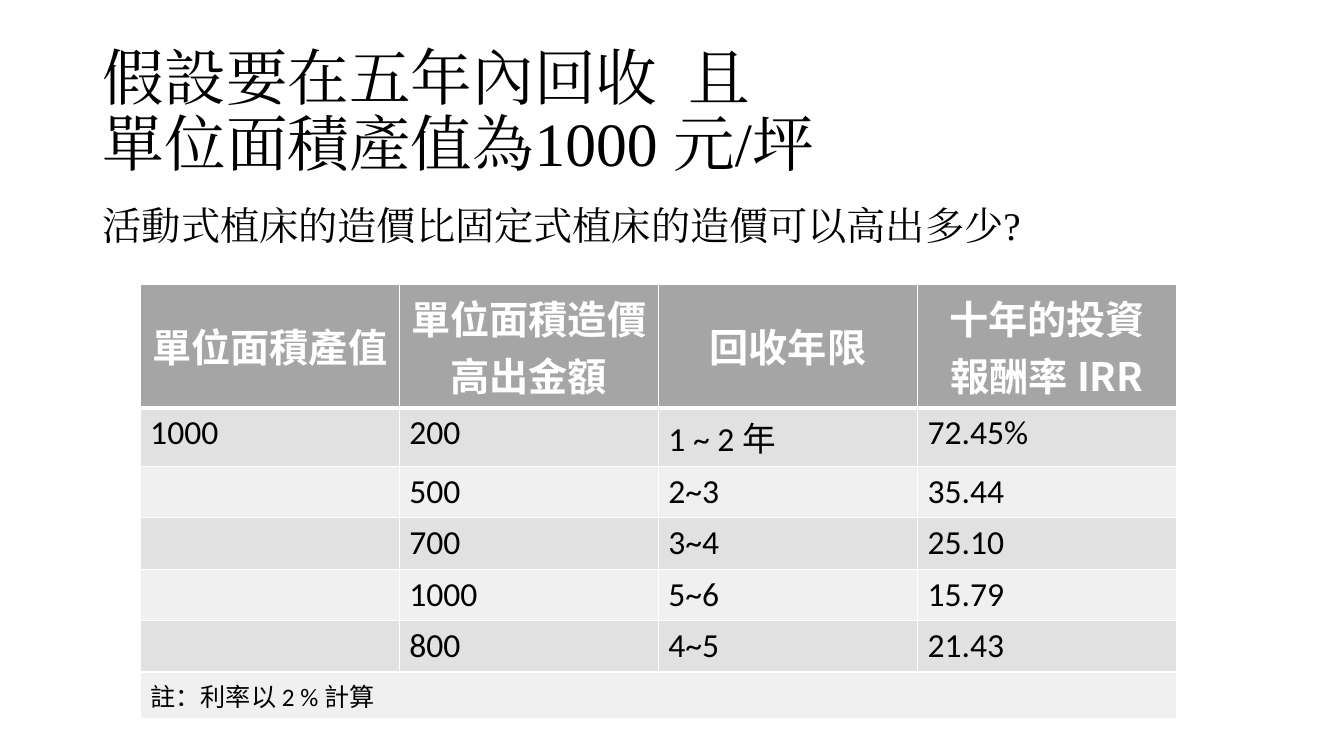
"""Build the slide on the payback of movable plant beds."""
from lxml.etree import SubElement
from pptx import Presentation
from pptx.dml.color import RGBColor
from pptx.enum.text import MSO_ANCHOR as Anchor, MSO_AUTO_SIZE as AutoSize, PP_ALIGN as Align
from pptx.oxml.ns import qn
from pptx.util import Inches, Pt

BLACK = RGBColor(0x00, 0x00, 0x00)
WHITE = RGBColor(0xFF, 0xFF, 0xFF)
HEADER_GRAY = RGBColor(0xA5, 0xA5, 0xA5)
BANDS = [RGBColor(0xF0, 0xF0, 0xF0), RGBColor(0xE1, 0xE1, 0xE1)]
SERIF, SANS, CJK = "Times New Roman", "Calibri", "Noto Sans CJK SC"


def add_lines(para, text, size, latin, asian, color=BLACK, bold=False):
    for number, line in enumerate(text.split("\n")):
        if number:
            para.add_line_break()
        span = para.add_run()
        span.text = line
        span.font.size = Pt(size)
        span.font.bold = bold
        span.font.color.rgb = color
        span.font.name = latin
        SubElement(span.font._element, qn("a:ea"), typeface=asian)


def set_borders(cell, top, bottom):
    properties = cell._tc.get_or_add_tcPr()
    for side, width in [("L", 1), ("R", 1), ("T", top), ("B", bottom)]:
        line = SubElement(properties, qn(f"a:ln{side}"), w=str(Pt(width)))
        fill = SubElement(line, qn("a:solidFill"))
        SubElement(fill, qn("a:srgbClr"), val=str(WHITE))


deck = Presentation()
deck.slide_width = Inches(13.33)
deck.slide_height = Inches(7.5)
page = deck.slides.add_slide(deck.slide_layouts[1])

placeholders = [
    (page.shapes.title, 0.4, 1.45, Anchor.MIDDLE, 44, 0,
     "假設要在五年內回收  且\n單位面積產值為1000 元/坪"),
    (page.placeholders[1], 2, 4.76, Anchor.TOP, 28, 10,
     "活動式植床的造價比固定式植床的造價可以高出多少?"),
]
for box, top, height, anchor, size, space, text in placeholders:
    box.left, box.top = Inches(0.92), Inches(top)
    box.width, box.height = Inches(11.5), Inches(height)
    frame = box.text_frame
    frame.auto_size = AutoSize.NONE
    frame.word_wrap = True
    frame.vertical_anchor = anchor
    para = frame.paragraphs[0]
    para.alignment = Align.LEFT
    para.line_spacing = 0.9
    para.space_before = Pt(space)
    properties = para._p.get_or_add_pPr()
    properties.set("marL", "0")
    properties.set("indent", "0")
    SubElement(properties, qn("a:buNone"))
    add_lines(para, text, size, SERIF, SERIF)

rows = [
    ["單位面積產值", "單位面積造價高出金額", "回收年限", "十年的投資\n報酬率 IRR"],
    ["1000", "200", "1 ~ 2 年", "72.45%"],
    ["", "500", "2~3", "35.44"],
    ["", "700", "3~4", "25.10"],
    ["", "1000", "5~6", "15.79"],
    ["", "800", "4~5", "21.43"],
    ["註：利率以 2 % 計算", "", "", ""],
]
heights = [1.22, 0.58, 0.51, 0.51, 0.51, 0.51, 0.46]
last = len(rows) - 1
table = page.shapes.add_table(
    len(rows), 4, Inches(1.39), Inches(2.82), Inches(10.3), Inches(sum(heights))).table
for column in table.columns:
    column.width = Inches(2.57)

for row, (texts, height) in enumerate(zip(rows, heights)):
    table.rows[row].height = Inches(height)
    for column, text in enumerate(texts):
        cell = table.cell(row, column)
        set_borders(cell, 3 if row == 1 else 1, 3 if row == 0 else 1)
        cell.fill.solid()
        cell.fill.fore_color.rgb = BANDS[row % 2] if row else HEADER_GRAY
        para = cell.text_frame.paragraphs[0]
        if row == 0:
            cell.vertical_anchor = Anchor.MIDDLE
            para.alignment = Align.CENTER
            add_lines(para, text, 28, CJK, CJK, WHITE, True)
        elif text:
            add_lines(para, text, 18 if row == last else 24, SANS, CJK)
table.cell(last, 0).merge(table.cell(last, 3))

deck.save("out.pptx")
